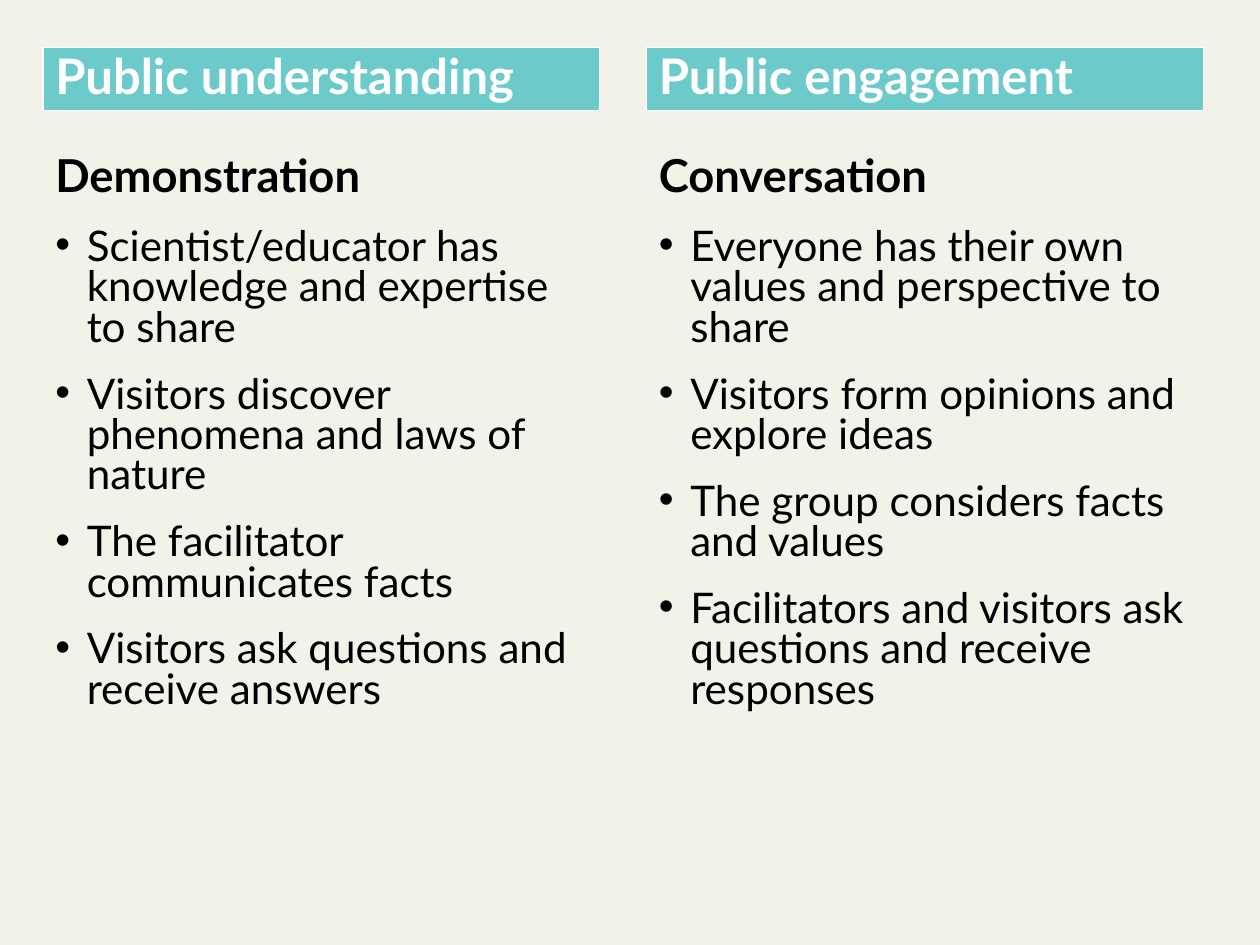
from dataclasses import dataclass

from lxml import etree
from pptx import Presentation
from pptx import util as u
from pptx.dml.color import RGBColor
from pptx.enum import shapes, text
from pptx.oxml import ns

CREAM = RGBColor(0xF2, 0xF2, 0xE9)
TEAL = RGBColor(0x6D, 0xCA, 0xCB)
WHITE = RGBColor(0xFF, 0xFF, 0xFF)
BLACK = RGBColor(0x00, 0x00, 0x00)

HEADER_FONT = dict(name="Lato", size=u.Pt(28), bold=True)
APPROACH_FONT = dict(name="Lato", size=u.Pt(25.9), bold=True)
POINT_FONT = dict(name="Lato", size=u.Pt(24.1), bold=False)
APPROACH_SPACING = dict(line_spacing=0.8, space_after=u.Pt(16))
POINT_SPACING = dict(line_spacing=0.8, space_after=u.Pt(15))

HEADER_TOP, HEADER_WIDTH, HEADER_HEIGHT = 0.38, 4.42, 0.5
POINTS_TOP, POINTS_HEIGHT = 1.2, 4.81
BULLET_INDENT = u.Inches(0.25)


@dataclass(frozen=True)
class Column:
    left: float
    points_width: float
    header: str
    approach: str
    points: tuple[str, ...]


COLUMNS = (
    Column(0.34, 4.42, "Public understanding", "Demonstration", (
        "Scientist/educator has knowledge and expertise to share",
        "Visitors discover phenomena and laws of nature",
        "The facilitator communicates facts",
        "Visitors ask questions and receive answers",
    )),
    Column(5.13, 4.65, "Public engagement", "Conversation", (
        "Everyone has their own values and perspective to share",
        "Visitors form opinions and explore ideas",
        "The group considers facts and values",
        "Facilitators and visitors ask questions and receive responses",
    )),
)


def apply(target, values: dict) -> None:
    for attribute, value in values.items():
        setattr(target, attribute, value)


def write(paragraph, wording: str, font: dict, color: RGBColor) -> None:
    paragraph.alignment = text.PP_ALIGN.LEFT
    run = paragraph.add_run()
    run.text = wording
    apply(run.font, font)
    run.font.color.rgb = color


def add_bullet(paragraph) -> None:
    properties = paragraph._p.get_or_add_pPr()
    properties.set("marL", str(BULLET_INDENT))
    properties.set("indent", str(-BULLET_INDENT))
    etree.SubElement(properties, ns.qn("a:buFont"), typeface="Arial")
    etree.SubElement(properties, ns.qn("a:buChar"), char="•")


def draw_header(slide, column: Column) -> None:
    header = slide.shapes.add_shape(
        shapes.MSO_SHAPE.RECTANGLE, u.Inches(column.left), u.Inches(HEADER_TOP),
        u.Inches(HEADER_WIDTH), u.Inches(HEADER_HEIGHT))
    header.shadow.inherit = False
    header.fill.solid()
    header.fill.fore_color.rgb = TEAL
    header.line.color.rgb = WHITE
    header.line.width = u.Pt(0.75)
    frame = header.text_frame
    apply(frame, dict(word_wrap=True, vertical_anchor=text.MSO_ANCHOR.BOTTOM))
    write(frame.paragraphs[0], column.header, HEADER_FONT, WHITE)


def draw_points(slide, column: Column) -> None:
    frame = slide.shapes.add_textbox(
        u.Inches(column.left), u.Inches(POINTS_TOP),
        u.Inches(column.points_width), u.Inches(POINTS_HEIGHT)).text_frame
    frame.word_wrap = True
    approach = frame.paragraphs[0]
    apply(approach, APPROACH_SPACING)
    write(approach, column.approach, APPROACH_FONT, BLACK)
    for wording in column.points:
        point = frame.add_paragraph()
        apply(point, POINT_SPACING)
        add_bullet(point)
        write(point, wording, POINT_FONT, BLACK)


def main() -> None:
    deck = Presentation()
    apply(deck, dict(slide_width=u.Inches(10), slide_height=u.Inches(7.5)))
    slide = deck.slides.add_slide(deck.slide_layouts.get_by_name("Blank"))
    slide.background.fill.solid()
    slide.background.fill.fore_color.rgb = CREAM
    for column in COLUMNS:
        draw_header(slide, column)
        draw_points(slide, column)
    deck.save("out.pptx")


if __name__ == "__main__":
    main()
